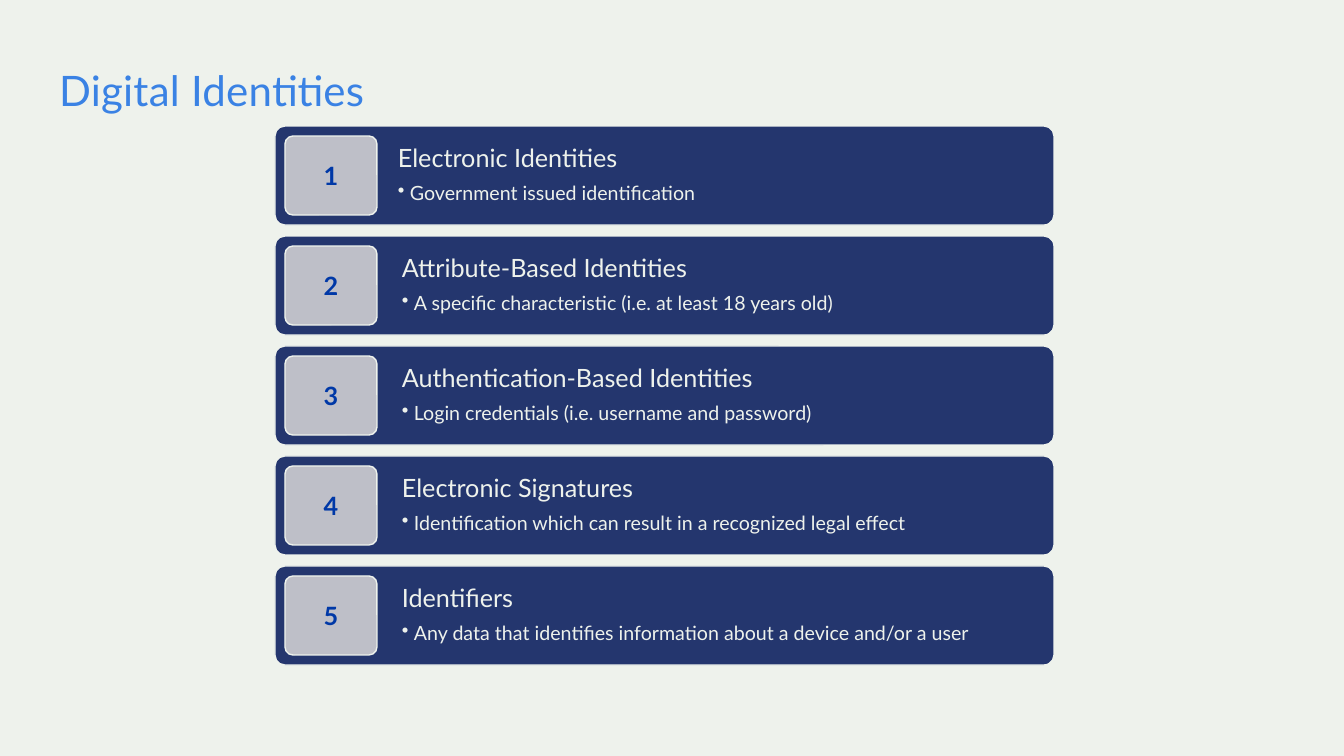
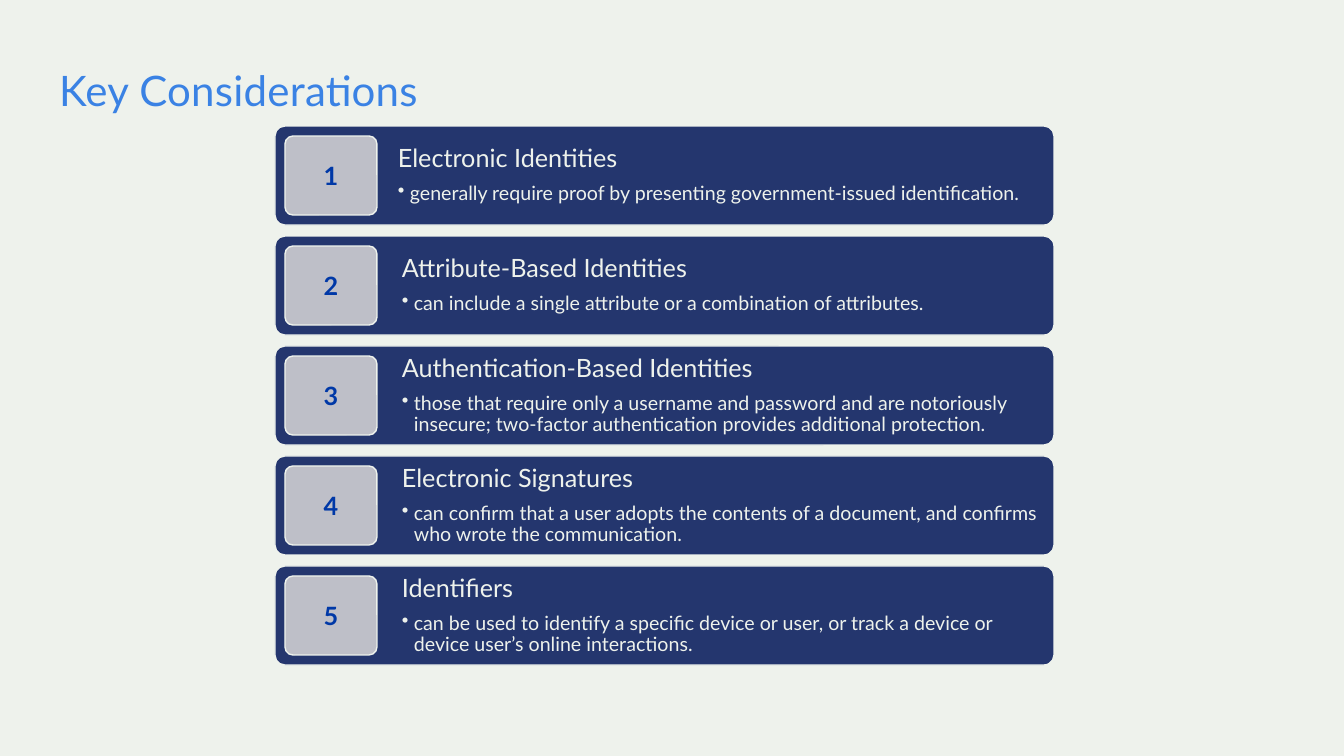
from lxml.etree import SubElement as Sub
from pptx import Presentation
from pptx.dml.color import RGBColor as RGB
from pptx.enum.shapes import MSO_SHAPE as Shape
from pptx.enum.text import MSO_ANCHOR as Anchor, MSO_AUTO_SIZE as Fit, PP_ALIGN as Align
from pptx.oxml.ns import qn
from pptx.util import Pt

KINDS = [
    "Electronic Identities",
    "Attribute-Based Identities",
    "Authentication-Based Identities",
    "Electronic Signatures",
    "Identifiers",
]
SLIDES = [
    ("Digital Identities", [
        "Government issued identification",
        "A specific characteristic (i.e. at least 18 years old)",
        "Login credentials (i.e. username and password)",
        "Identification which can result in a recognized legal effect",
        "Any data that identifies information about a device and/or a user",
    ]),
    ("Key Considerations", [
        "generally require proof by presenting government-issued identification.",
        "can include a single attribute or a combination of attributes.",
        "those that require only a username and password and are notoriously insecure; "
        "two-factor authentication provides additional protection.",
        "can confirm that a user adopts the contents of a document, and confirms "
        "who wrote the communication.",
        "can be used to identify a specific device or user, or track a device or "
        "device user’s online interactions.",
    ]),
]
COLORS = {
    "pale": "EEF2EC",
    "title": "3A82E4",
    "navy": "24366E",
    "gray": "BEBFC8",
    "blue": "0038A7",
}
FACE = "Lato"
PX = 914400 / 100.8
WIDE, HIGH = 1344, 756
TITLE = (59, 62, 1226, 60)
LEFT, TOP, WIDTH, HEIGHT = 275, 126, 779, 99
STEP, PAD, BADGE = 110, 10, 92
HANG = 12


def emu(*sizes):
    return [round(size * PX) for size in sizes]


def color(name):
    return RGB.from_string(COLORS[name])


def style(para, size, tint, bold=False):
    font = para.font
    font.name, font.size, font.bold = FACE, Pt(size), bold
    font.color.rgb = color(tint)


def inset(frame, left, top, right, bottom):
    (frame.margin_left, frame.margin_top,
     frame.margin_right, frame.margin_bottom) = emu(left, top, right, bottom)


def panel(slide, box, fill):
    shape = slide.shapes.add_shape(Shape.ROUNDED_RECTANGLE, *emu(*box))
    shape.adjustments[0] = 0.1
    shape.shadow.inherit = False
    shape.fill.solid()
    shape.fill.fore_color.rgb = color(fill)
    shape.line.color.rgb = color("pale")
    shape.line.width = Pt(1)
    frame = shape.text_frame
    frame.word_wrap = True
    frame.vertical_anchor = Anchor.MIDDLE
    return frame


def bullet(para):
    para.level = 1
    props = para._p.get_or_add_pPr()
    hang, = emu(HANG)
    props.set("marL", str(hang))
    props.set("indent", str(-hang))
    Sub(props, qn("a:buChar")).set("char", "•")


def add_title(slide, text):
    title = slide.shapes.title
    title.left, title.top, title.width, title.height = emu(*TITLE)
    frame = title.text_frame
    frame.text = text
    frame.auto_size = Fit.NONE
    frame.vertical_anchor = Anchor.TOP
    inset(frame, 0, 0, 0, 0)
    para = frame.paragraphs[0]
    para.alignment = Align.LEFT
    para.line_spacing = 1.06
    style(para, 30, "title")
    para.runs[0]._r.get_or_add_rPr().set("spc", "20")


def add_row(slide, index, kind, note):
    top = TOP + index * STEP
    frame = panel(slide, (LEFT, top, WIDTH, HEIGHT), "navy")
    inset(frame, 124 if index else 120, 7, 5, 7)
    head = frame.paragraphs[0]
    body = frame.add_paragraph()
    bullet(body)
    for para, text, size in ((head, kind, 18), (body, note, 14)):
        para.text = text
        para.alignment = Align.LEFT
        para.line_spacing = 0.9
        style(para, size, "pale")
    head.space_after = Pt(7.5)

    badge = panel(slide, (LEFT + PAD, top + PAD, BADGE, HEIGHT - 2 * PAD), "gray")
    digit = badge.paragraphs[0]
    digit.text = str(index + 1)
    digit.alignment = Align.CENTER
    style(digit, 18, "blue", True)


def main():
    deck = Presentation()
    deck.slide_width, deck.slide_height = emu(WIDE, HIGH)
    back = deck.slide_master.background.fill
    back.solid()
    back.fore_color.rgb = color("pale")
    for title, notes in SLIDES:
        slide = deck.slides.add_slide(deck.slide_layouts[5])
        add_title(slide, title)
        for index, (kind, note) in enumerate(zip(KINDS, notes)):
            add_row(slide, index, kind, note)
    deck.save("out.pptx")


if __name__ == "__main__":
    main()
